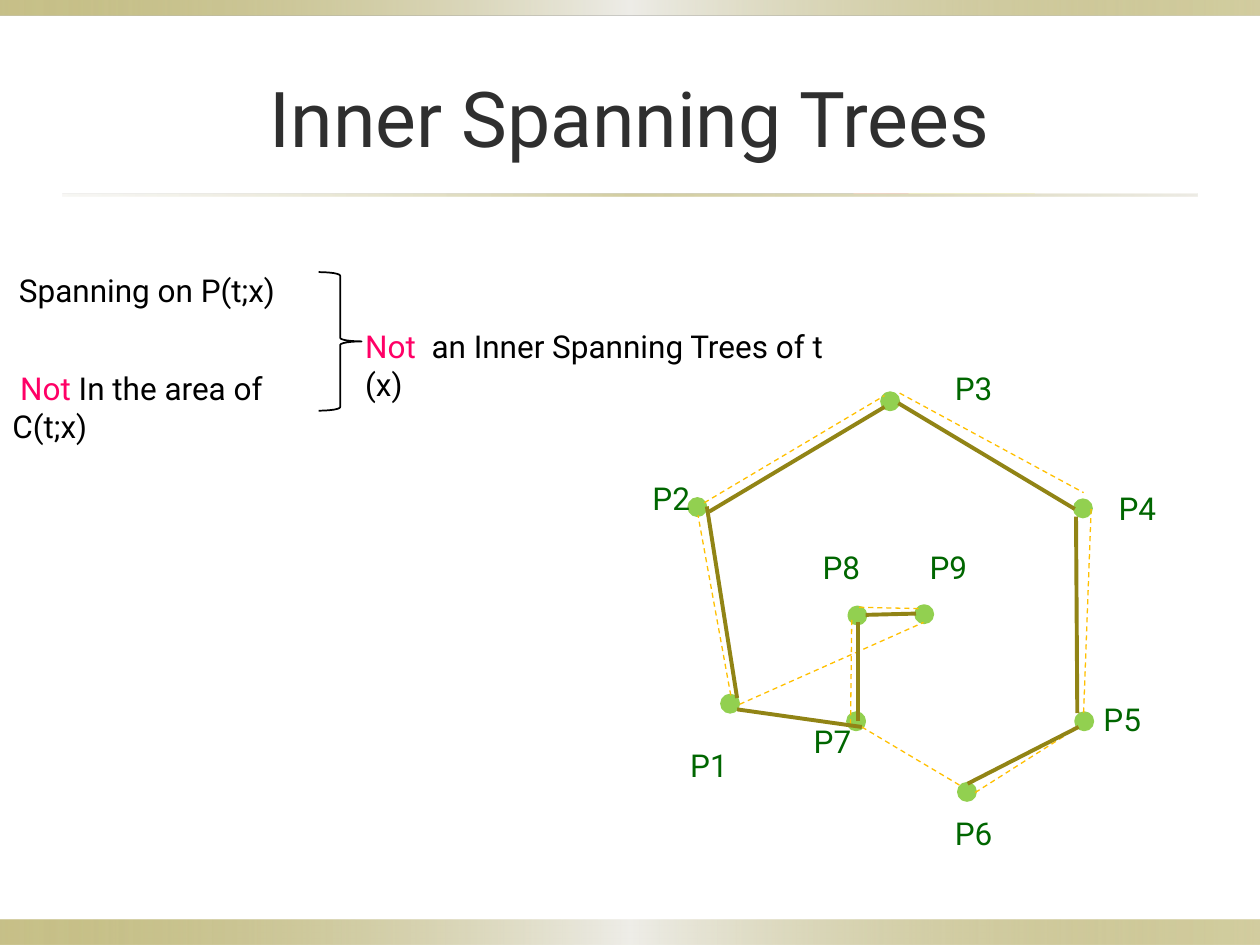
"""Build the slide on inner spanning trees."""
from lxml.etree import SubElement
from pptx import Presentation
from pptx.dml.color import RGBColor
from pptx.enum.dml import MSO_LINE
from pptx.enum.shapes import MSO_CONNECTOR, MSO_SHAPE
from pptx.enum.text import MSO_ANCHOR, MSO_AUTO_SIZE, PP_ALIGN
from pptx.oxml.ns import qn
from pptx.util import Inches, Pt

COLORS = {
    "olive": "918415", "pale": "EEEDE8", "sand": "DCD9CC", "title": "2F2F2F",
    "text": "000000", "not": "FF0066", "label": "006600", "node": "92D050",
    "polygon": "FFC000",
}
BAND = [(0, "olive", 50), (50, "pale", 100), (100, "olive", 40)]
RULE = [(0, "sand", 20), (50, "olive", 40), (100, "sand", 50)]
NODE_SIZE = 0.13

# name: node left and top, label left, top and width
POINTS = {
    "P1": ((5.73, 5.52), (5.38, 5.87, 0.8)),
    "P2": ((5.47, 3.96), (5.08, 3.75, 0.55)),
    "P3": ((7, 3.12), (7.48, 2.88, 0.59)),
    "P4": ((8.53, 3.97), (8.78, 3.83, 0.63)),
    "P5": ((8.54, 5.66), (8.66, 5.51, 0.67)),
    "P6": ((7.61, 6.22), (7.48, 6.41, 0.75)),
    "P7": ((6.73, 5.66), (6.36, 5.68, 0.68)),
    "P8": ((6.74, 4.82), (6.43, 4.3, 0.7)),
    "P9": ((7.27, 4.81), (7.28, 4.3, 0.63)),
}
POLYGON_EDGES = [
    (5.87, 5.59, 7.33, 4.94), (7.74, 6.29, 8.56, 5.77), (6.84, 5.77, 7.63, 6.24),
    (6.76, 4.92, 6.75, 5.77), (7.29, 4.83, 6.81, 4.82), (5.8, 5.52, 5.54, 4.09),
    (5.59, 3.99, 7.02, 3.14), (8.66, 4.04, 8.6, 5.66), (7.14, 3.12, 8.6, 3.91),
]
TREE_EDGES = [
    (5.63, 4.06, 7.02, 3.23), (7.13, 3.2, 8.53, 4.04), (8.54, 4.1, 8.55, 5.66),
    (8.56, 5.77, 7.68, 6.22), (6.87, 4.88, 7.27, 4.87), (5.61, 4.02, 5.85, 5.54),
    (5.85, 5.63, 6.84, 5.77), (6.81, 4.94, 6.81, 5.72),
]


def color(name):
    """Return the named colour."""
    return RGBColor.from_string(COLORS[name])


def write(frame, runs, size=18, align=None, indent=0):
    """Write (text, colour) runs as one formatted paragraph."""
    paragraph = frame.paragraphs[0]
    if align is not None:
        paragraph.alignment = align
    if indent:
        paragraph._p.get_or_add_pPr().set("marL", str(Inches(indent)))
    for words, tint in runs:
        run = paragraph.add_run()
        run.text = words
        run.font.name = "Roboto"
        run.font.size = Pt(size)
        run.font.color.rgb = color(tint)


def add_text(shapes, left, top, width, runs, **style):
    """Add a wrapping text box that grows with its text."""
    frame = shapes.add_textbox(*map(Inches, (left, top, width, 0.4))).text_frame
    frame.word_wrap = True
    frame.auto_size = MSO_AUTO_SIZE.SHAPE_TO_FIT_TEXT
    write(frame, runs, **style)


def add_preset(shapes, preset, left, top, width, height, fill=None, line=None, weight=1):
    """Add a preset shape with plain fill and outline."""
    shape = shapes.add_shape(preset, *map(Inches, (left, top, width, height)))
    shape.shadow.inherit = False
    if fill:
        shape.fill.solid()
        shape.fill.fore_color.rgb = color(fill)
    else:
        shape.fill.background()
    if line:
        shape.line.color.rgb = color(line)
        shape.line.width = Pt(weight)
    else:
        shape.line.fill.background()
    return shape


def add_band(shapes, left, top, width, height, stops):
    """Add a bar with a horizontal gradient of (position, colour, opacity) stops."""
    band = add_preset(shapes, MSO_SHAPE.RECTANGLE, left, top, width, height)
    band.fill.gradient()
    band.fill.gradient_angle = 0
    stop_list = band._element.spPr.find(qn("a:gradFill")).find(qn("a:gsLst"))
    for old_stop in list(stop_list):
        stop_list.remove(old_stop)
    for position, tint, opacity in stops:
        stop = SubElement(stop_list, qn("a:gs"), pos=str(position * 1000))
        rgb = SubElement(stop, qn("a:srgbClr"), val=COLORS[tint])
        SubElement(rgb, qn("a:alpha"), val=str(opacity * 1000))


def add_edges(shapes, edges, tint, weight, dash=None):
    """Add straight edges of one style."""
    for edge in edges:
        connector = shapes.add_connector(MSO_CONNECTOR.STRAIGHT, *map(Inches, edge))
        connector.line.color.rgb = color(tint)
        connector.line.width = Pt(weight)
        if dash is not None:
            connector.line.dash_style = dash
        SubElement(connector._element.spPr, qn("a:effectLst"))


def add_title(slide, words):
    """Place and fill the title placeholder."""
    title = slide.shapes.title
    title.left, title.top, title.width, title.height = map(Inches, (0.5, 0.3, 9, 1.25))
    title.text_frame.vertical_anchor = MSO_ANCHOR.MIDDLE
    write(title.text_frame, [(words, "title")], size=44, align=PP_ALIGN.CENTER)


def add_polygon(shapes):
    """Add the labelled points and the dashed polygon through them."""
    for node, _ in POINTS.values():
        add_preset(shapes, MSO_SHAPE.FLOWCHART_CONNECTOR, *node, NODE_SIZE, NODE_SIZE,
                   fill="node", line="node", weight=2)
    for name, (_, label) in POINTS.items():
        add_text(shapes, *label, [(name, "label")])
    add_edges(shapes, POLYGON_EDGES, "polygon", 0.75, MSO_LINE.DASH)


def main():
    """Build and save the slide."""
    deck = Presentation()
    deck.slide_width, deck.slide_height = Inches(10), Inches(7.5)
    slide = deck.slides.add_slide(deck.slide_layouts[5])
    shapes = slide.shapes
    add_band(shapes, 0, 7.3, 10, 0.2, BAND)
    add_band(shapes, 0, 0, 10, 0.12, BAND)
    add_band(shapes, 0.5, 1.54, 9, 0.02, RULE)
    add_title(slide, "Inner Spanning Trees")
    add_text(shapes, -0.51, 2.1, 2.91, [(" Spanning on P(t;x)", "text")], indent=0.5)
    add_preset(shapes, MSO_SHAPE.RIGHT_BRACE, 2.53, 2.16, 0.34, 1.1, line="text")
    add_text(shapes, 2.8, 2.55, 4.01,
             [("Not", "not"), ("  an Inner Spanning Trees of t (x)", "text")])
    add_text(shapes, 0, 2.88, 2.73,
             [(" Not ", "not"), ("In the area of C(t;x)", "text")])
    add_polygon(shapes.add_group_shape().shapes)
    add_edges(shapes.add_group_shape().shapes, TREE_EDGES, "olive", 2.25)
    deck.save("out.pptx")


if __name__ == "__main__":
    main()
